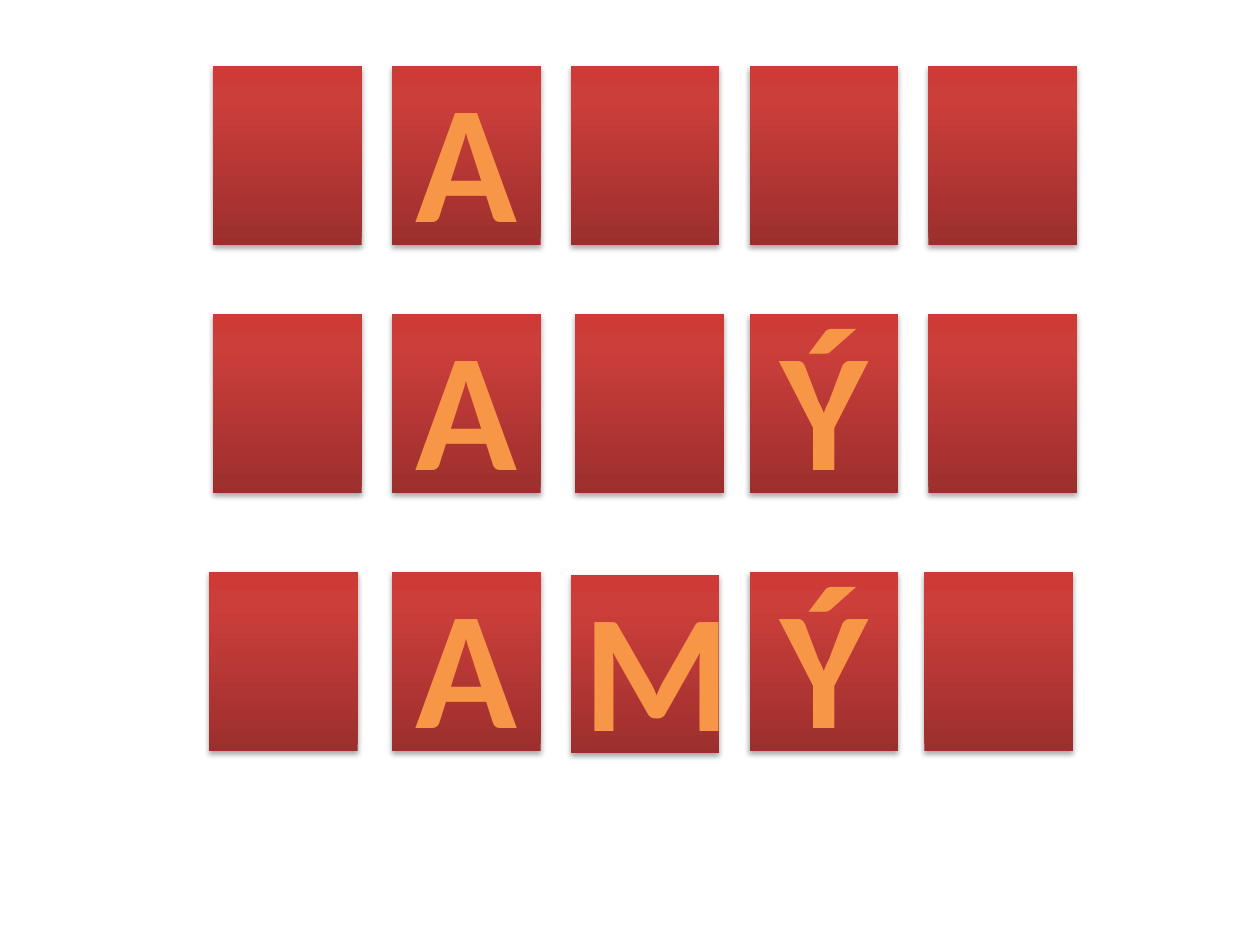
import copy

import pptx
import pptx.dml.color
import pptx.enum.shapes
import pptx.enum.text
import pptx.oxml
import pptx.oxml.ns
import pptx.util
from pptx.util import Pt

COLORS = {
    "tile_bottom": "9C2F2D",
    "tile_middle": "CB3E3A",
    "tile_top": "CE3B37",
    "letter": "F79646",
    "letter_edge": "D73A36",
    "shadow": "000000",
}
GRADIENT = [(0, "tile_bottom"), (0.8, "tile_middle"), (1, "tile_top")]
TILE_WIDTH, TILE_HEIGHT = 85, 102.2
LEFT, COLUMN_STEP = 121.7, 102.2
ROWS = [(37.6, " A   "), (179.4, " A Ý "), (326.8, " AMÝ ")]
# (row, column): small shifts right and down from the grid
NUDGES = {(1, 2): (2.5, 0), (2, 0): (-2.3, 0), (2, 2): (0, 1.5), (2, 4): (-2.3, 0)}
DRAWING = pptx.oxml.ns.nsdecls("a")


def rgb(name):
    return pptx.dml.color.RGBColor.from_string(COLORS[name])


def write(shape, text, *, size, font, color, edge, edge_width, bold=False):
    """Put centred, outlined text in a shape."""
    frame = shape.text_frame
    frame.word_wrap = True
    frame.vertical_anchor = pptx.enum.text.MSO_ANCHOR.MIDDLE
    para = frame.paragraphs[0]
    para.alignment = pptx.enum.text.PP_ALIGN.CENTER
    span = para.add_run()
    span.text = text
    span.font.size = Pt(size)
    span.font.name = font
    span.font.bold = bold
    span.font.fill.solid()
    span.font.fill.fore_color.rgb = rgb(color)
    outline = pptx.oxml.parse_xml(
        f'<a:ln {DRAWING} w="{Pt(edge_width)}"><a:solidFill>'
        f'<a:srgbClr val="{COLORS[edge]}"/></a:solidFill></a:ln>'
    )
    span.font._element.insert(0, outline)


deck = pptx.Presentation()
deck.slide_width, deck.slide_height = Pt(720), Pt(540)
page = deck.slides.add_slide(deck.slide_layouts[6])

for row, (top, letters) in enumerate(ROWS):
    for column, letter in enumerate(letters):
        right, down = NUDGES.get((row, column), (0, 0))
        tile = page.shapes.add_shape(
            pptx.enum.shapes.MSO_SHAPE.RECTANGLE,
            Pt(LEFT + column * COLUMN_STEP + right), Pt(top + down),
            Pt(TILE_WIDTH), Pt(TILE_HEIGHT),
        )
        tile.line.fill.background()

        tile.fill.gradient()
        tile.fill.gradient_angle = 90
        properties = tile._element.spPr
        stop_list = properties.find(".//" + pptx.oxml.ns.qn("a:gsLst"))
        stop_list.append(copy.deepcopy(stop_list[-1]))
        for stop, (position, color) in zip(tile.fill.gradient_stops, GRADIENT):
            stop.position = position
            stop.color.rgb = rgb(color)

        tile.shadow.inherit = False
        effects = properties.find(pptx.oxml.ns.qn("a:effectLst"))
        effects.append(pptx.oxml.parse_xml(
            f'<a:outerShdw {DRAWING} blurRad="{Pt(3.15)}" dist="{Pt(1.8)}" '
            f'dir="5400000" rotWithShape="0"><a:srgbClr val="{COLORS["shadow"]}">'
            '<a:alpha val="35000"/></a:srgbClr></a:outerShdw>'
        ))

        if letter != " ":
            write(tile, letter, size=96, font="Calibri", color="letter",
                  edge="letter_edge", edge_width=1.42, bold=True)

deck.save("out.pptx")
